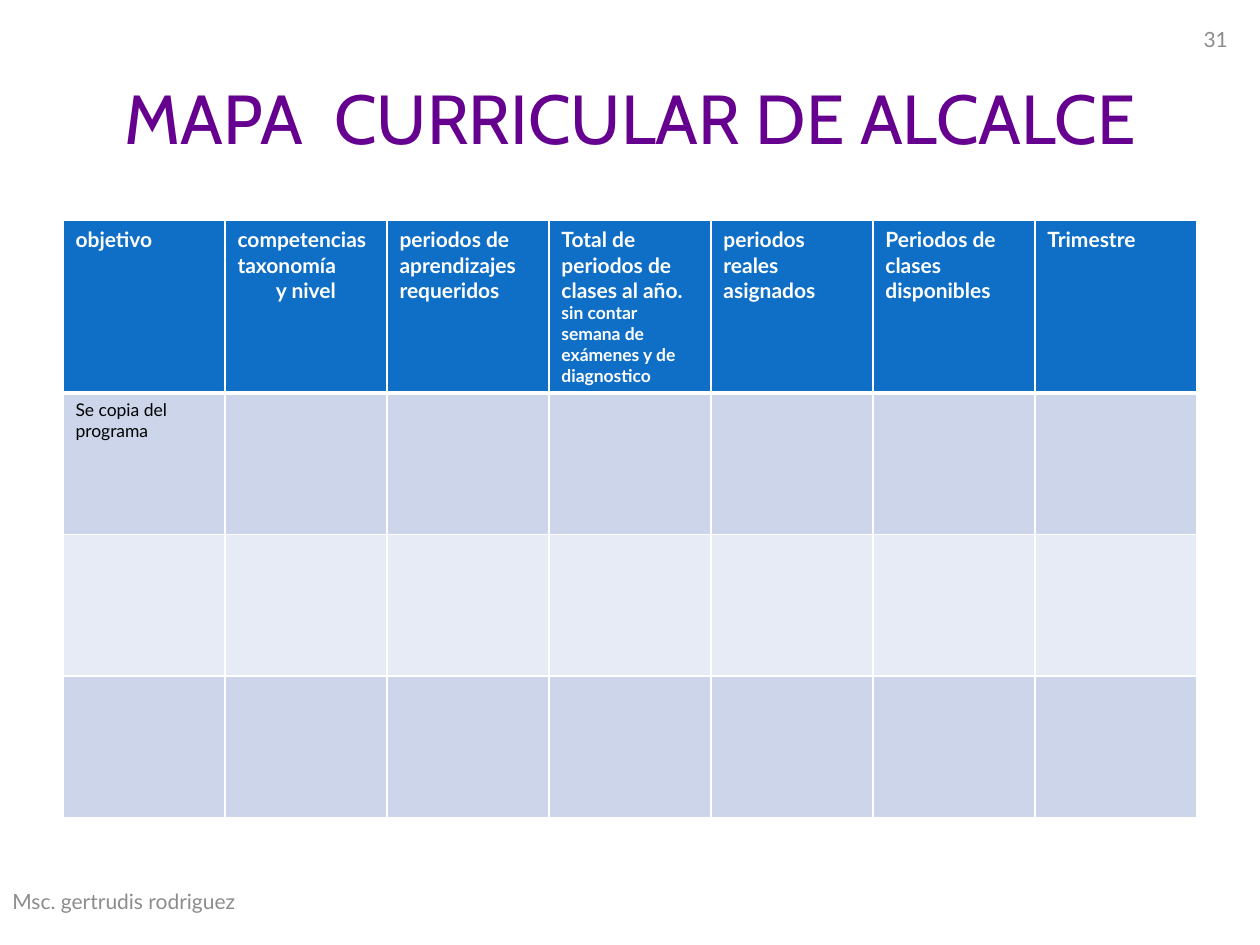
import lxml.etree
import pptx
import pptx.dml.color
import pptx.enum.shapes
import pptx.enum.text
import pptx.oxml.ns
import pptx.util

Cm = pptx.util.Cm
Pt = pptx.util.Pt
ALIGN = pptx.enum.text.PP_ALIGN
GREY = "8C8C8C"
WHITE = "FFFFFF"
HEADER_FILL = "0F6FC6"
BAND_FILLS = ["CCD5EA", "E7EBF5"]
HEADERS = [
    ["objetivo"],
    ["competencias", "taxonomía", "y nivel"],
    ["periodos de aprendizajes", "requeridos"],
    ["Total de periodos de clases al año.",
     "sin contar semana de exámenes y de diagnostico"],
    ["periodos", "reales asignados"],
    ["Periodos de clases disponibles"],
    ["Trimestre"],
]
BODY_ROWS = 3
HEADER_HEIGHT = 3.43


def rgb(value):
    return pptx.dml.color.RGBColor.from_string(value)


def write(text_frame, lines, size, color, font="Lato", bold=False, align=ALIGN.LEFT):
    text_frame.word_wrap = True
    text_frame.text = "\n".join(lines)
    for paragraph in text_frame.paragraphs:
        paragraph.alignment = align
        paragraph.font.size = Pt(size)
        paragraph.font.name = font
        paragraph.font.bold = bold
        paragraph.font.color.rgb = rgb(color)


def add_label(slide, box, text, size, color, font="Lato", align=ALIGN.LEFT):
    shape = slide.shapes.add_textbox(*map(Cm, box))
    write(shape.text_frame, [text], size, color, font, align=align)
    shape.text_frame.vertical_anchor = pptx.enum.text.MSO_ANCHOR.MIDDLE


def add_page_number(slide, box, text):
    shape = slide.shapes.add_shape(
        pptx.enum.shapes.MSO_SHAPE.ROUNDED_RECTANGLE, *map(Cm, box))
    shape.shadow.inherit = False
    shape.fill.background()
    shape.line.fill.background()
    write(shape.text_frame, [text], 12, GREY, align=ALIGN.CENTER)
    shape.text_frame.vertical_anchor = pptx.enum.text.MSO_ANCHOR.MIDDLE


def style_cell(cell, fill, top, bottom):
    cell.fill.solid()
    cell.fill.fore_color.rgb = rgb(fill)
    properties = cell._tc.get_or_add_tcPr()
    qn = pptx.oxml.ns.qn
    widths = {"a:lnL": 1, "a:lnR": 1, "a:lnT": top, "a:lnB": bottom}
    for index, (tag, width) in enumerate(widths.items()):
        line = lxml.etree.Element(qn(tag), w=str(Pt(width)))
        line_fill = lxml.etree.SubElement(line, qn("a:solidFill"))
        lxml.etree.SubElement(line_fill, qn("a:srgbClr"), val=WHITE)
        properties.insert(index, line)


def add_curriculum_table(slide, box):
    left, top, width, height = box
    table = slide.shapes.add_table(
        BODY_ROWS + 1, len(HEADERS), Cm(left), Cm(top), Cm(width), Cm(height)).table
    for column in table.columns:
        column.width = Cm(width / len(HEADERS))
    for index, row in enumerate(table.rows):
        row.height = Cm((height - HEADER_HEIGHT) / BODY_ROWS if index else HEADER_HEIGHT)
        fill = BAND_FILLS[(index - 1) % 2] if index else HEADER_FILL
        for cell in row.cells:
            style_cell(cell, fill, 3 if index == 1 else 1, 1 if index else 3)

    for column, lines in enumerate(HEADERS):
        write(table.cell(0, column).text_frame, lines, 12, WHITE, bold=True)
    table.cell(0, 1).text_frame.paragraphs[2].alignment = ALIGN.CENTER
    table.cell(0, 3).text_frame.paragraphs[1].font.size = Pt(10)
    write(table.cell(1, 0).text_frame, ["Se copia del programa"], 10, "000000")


def main():
    presentation = pptx.Presentation()
    presentation.slide_width = Cm(25.4)
    presentation.slide_height = Cm(19.05)
    slide = presentation.slides.add_slide(presentation.slide_layouts[6])
    add_label(slide, (1.27, 0.76, 22.86, 3.18), "MAPA  CURRICULAR DE ALCALCE",
              39.6, "66008F", "Cabin", ALIGN.CENTER)
    add_curriculum_table(slide, (1.27, 4.45, 22.86, 11.99))
    add_label(slide, (0, 17.65, 8.05, 1.02), "Msc. gertrudis rodriguez", 12, GREY)
    add_page_number(slide, (23.62, 0, 1.78, 1.57), "31")
    presentation.save("out.pptx")


if __name__ == "__main__":
    main()
